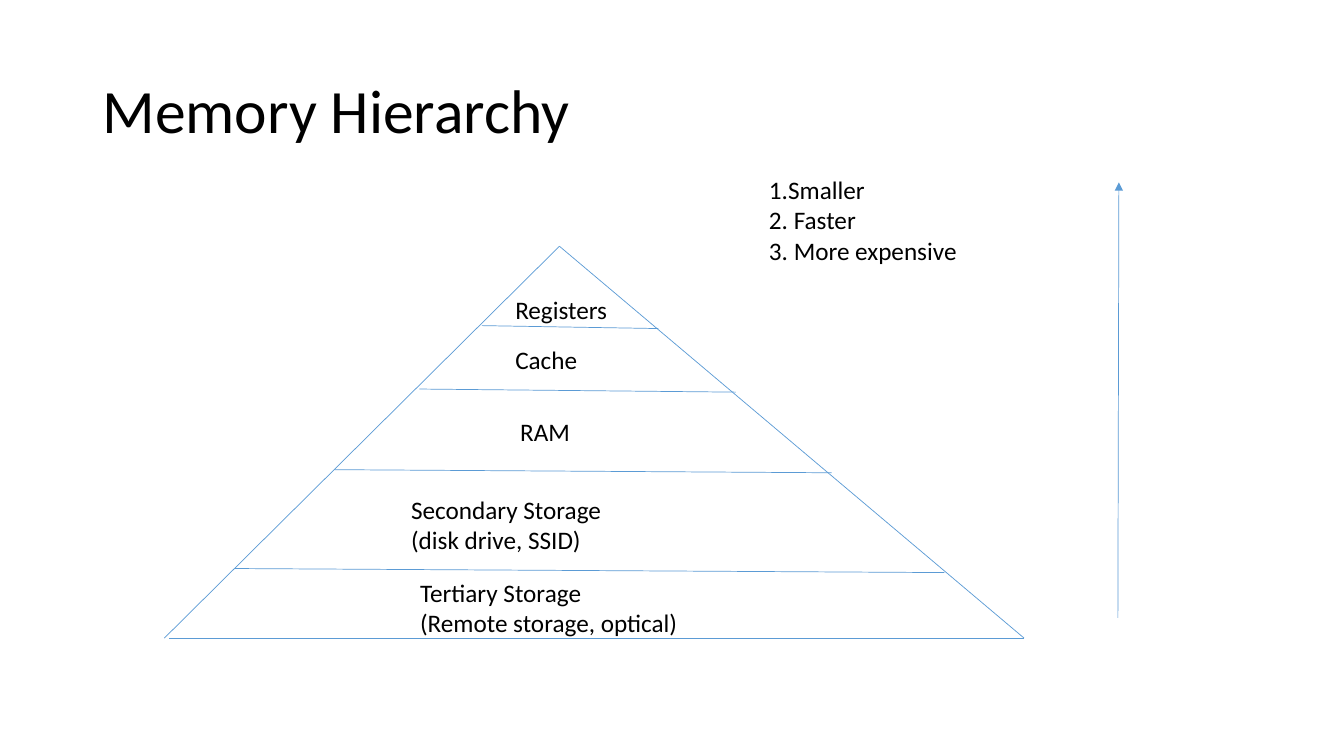
from lxml.etree import SubElement
from pptx import Presentation
from pptx.dml.color import RGBColor
from pptx.enum.shapes import MSO_CONNECTOR
from pptx.enum.text import MSO_ANCHOR, PP_ALIGN
from pptx.oxml.ns import qn
from pptx.util import Pt

COLORS = {"text": "000000", "line": "5B9BD5", "back": "FFFFFF"}


class Deck:
    font = "Calibri"

    def __init__(self, width, height):
        self.prs = Presentation()
        self.prs.slide_width, self.prs.slide_height = Pt(width), Pt(height)
        self.slide = self.prs.slides.add_slide(self.prs.slide_layouts[5])
        fill = self.slide.background.fill
        fill.solid()
        fill.fore_color.rgb = self.color("back")

    def color(self, name):
        return RGBColor.from_string(COLORS[name])

    def set_text(self, frame, lines, size):
        frame.word_wrap = True
        frame.text = "\n".join(lines)
        for para in frame.paragraphs:
            para.alignment = PP_ALIGN.LEFT
            para.font.name = self.font
            para.font.size = Pt(size)
            para.font.color.rgb = self.color("text")

    def title(self, text, left, top, width, height):
        shape = self.slide.shapes.title
        shape.left, shape.top = Pt(left), Pt(top)
        shape.width, shape.height = Pt(width), Pt(height)
        self.set_text(shape.text_frame, [text], 44)
        shape.text_frame.vertical_anchor = MSO_ANCHOR.MIDDLE
        shape.text_frame.paragraphs[0].line_spacing = 0.9

    def label(self, lines, left, top, width):
        height = 7.2 + 22 * len(lines)
        box = self.slide.shapes.add_textbox(
            Pt(left), Pt(top), Pt(width), Pt(height))
        self.set_text(box.text_frame, lines, 18)

    def line(self, start, end, arrow=False):
        link = self.slide.shapes.add_connector(
            MSO_CONNECTOR.STRAIGHT, *map(Pt, start + end))
        link.line.color.rgb = self.color("line")
        link.line.width = Pt(0.5)
        props = link._element.spPr
        if arrow:
            SubElement(props.find(qn("a:ln")), qn("a:tailEnd"),
                       type="triangle")
        SubElement(props, qn("a:effectLst"))


def main():
    deck = Deck(960, 540)
    deck.title("Memory Hierarchy", 66, 28.8, 828, 104.4)

    apex, right = (399.6, 175.9), (731.5, 455.8)
    deck.line(apex, (117.4, 455.8))
    deck.line(apex, right)
    deck.line((121, 455.8), right)

    # Dividers between levels: left end, right end
    for start, end in [
        ((344.2, 232.6), (470.2, 234.7)),
        ((299.5, 277.9), (525.6, 280.1)),
        ((239, 335.5), (594, 337.7)),
        ((167.8, 406.1), (674.6, 409)),
    ]:
        deck.line(start, end)

    for lines, left, top, width in [
        (["Registers"], 361, 206.6, 119),
        (["Cache"], 361, 242.6, 119),
        (["RAM"], 364.5, 293.8, 119),
        (["Secondary Storage", "(disk drive, SSID)"], 286.6, 349.2, 199.4),
        (["Tertiary Storage", "(Remote storage, optical)"], 293, 408.6, 199.4),
        (["1.Smaller", "2. Faster", "3. More expensive"], 542.2, 121, 189.4),
    ]:
        deck.label(lines, left, top, width)

    deck.line((798.5, 441.4), (799.2, 130.3), arrow=True)
    deck.prs.save("out.pptx")


if __name__ == "__main__":
    main()
